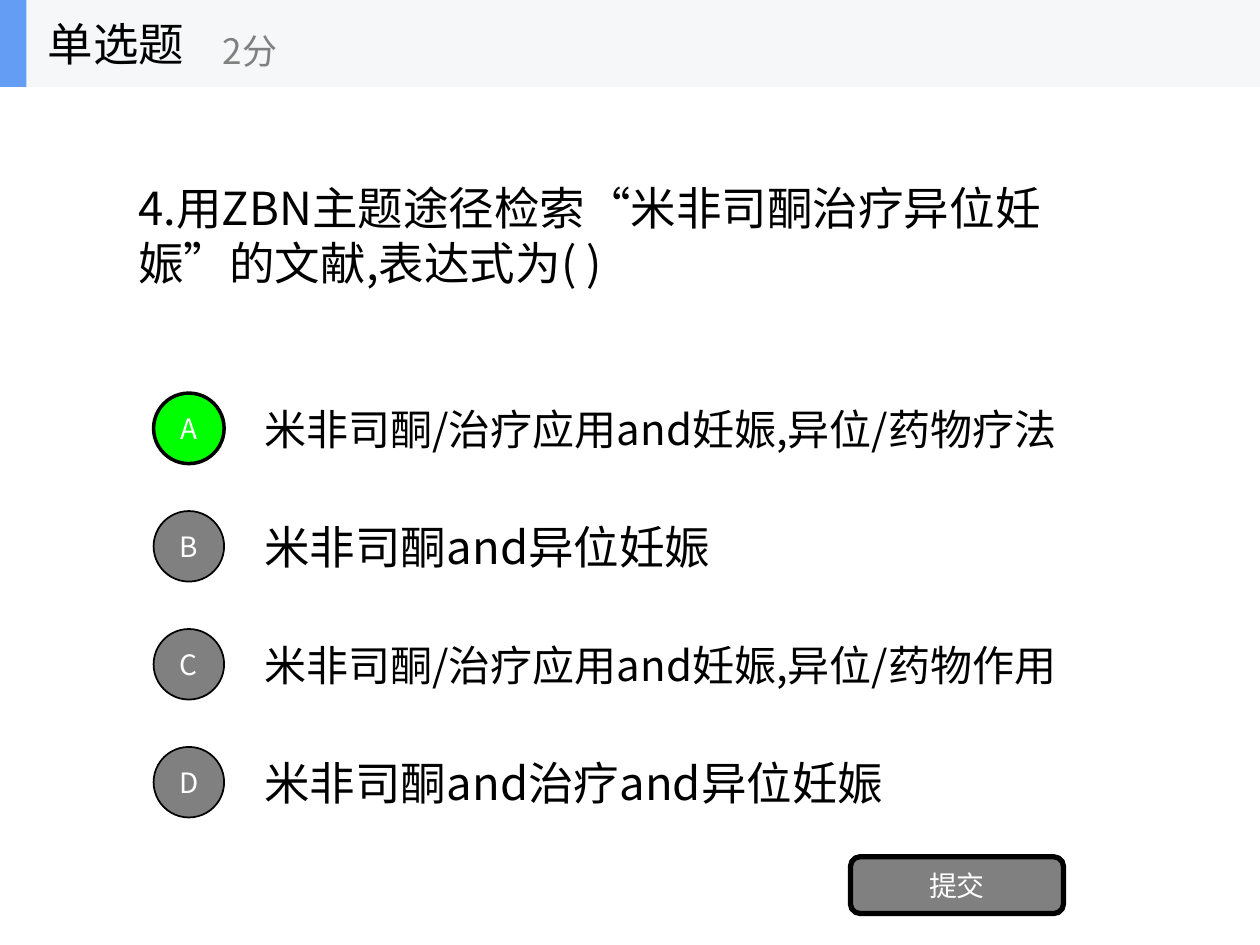
from lxml import etree
from pptx import Presentation
from pptx.dml.color import RGBColor
from pptx.enum.shapes import MSO_SHAPE
from pptx.enum.text import MSO_ANCHOR, MSO_AUTO_SIZE, PP_ALIGN
from pptx.oxml.ns import qn
from pptx.util import Pt

RECT, OVAL, ROUNDED = MSO_SHAPE.RECTANGLE, MSO_SHAPE.OVAL, MSO_SHAPE.ROUNDED_RECTANGLE
MIDDLE, LEFT, CENTER = MSO_ANCHOR.MIDDLE, PP_ALIGN.LEFT, PP_ALIGN.CENTER
GROW, FIXED = MSO_AUTO_SIZE.SHAPE_TO_FIT_TEXT, MSO_AUTO_SIZE.NONE

# Content
FONT = "Noto Sans CJK SC"
BLACK, WHITE, GRAY, GREEN = "000000", "FFFFFF", "808080", "00FF00"
BAR, ACCENT = "F6F7F8", "639EF4"
TITLE, SCORE, SUBMIT = "单选题", "2分", "提交"
QUESTION = "4.用ZBN主题途径检索“米非司酮治疗异位妊娠”的文献,表达式为( )"
ANSWER = "A"
OPTIONS = [  # letter, text, text size, text box width, text box height
    ("A", "米非司酮/治疗应用and妊娠,异位/药物疗法", 24, 475.2, 36),
    ("B", "米非司酮and异位妊娠", 26, 277.2, 38.2),
    ("C", "米非司酮/治疗应用and妊娠,异位/药物作用", 24, 475.2, 36),
    ("D", "米非司酮and治疗and异位妊娠", 26, 375.8, 38.2),
]

# Layout, in points
HEADER_HEIGHT = 49.7
FIRST_CENTER, OPTION_PITCH = 244.8, 67.4
CIRCLE_LEFT, CIRCLE_SIZE, OPTION_LEFT = 87.8, 40.3, 144


def color(value):
    return RGBColor.from_string(value)


def write(shape, text, size, ink, align=LEFT, wrap=True, fit=FIXED):
    frame = shape.text_frame
    settings = {"word_wrap": wrap, "auto_size": fit, "vertical_anchor": MIDDLE}
    for name, value in settings.items():
        setattr(frame, name, value)
    para = frame.paragraphs[0]
    para.alignment = align
    span = para.add_run()
    span.text = text
    for name, value in {"size": Pt(size), "name": FONT}.items():
        setattr(span.font, name, value)
    span.font.color.rgb = color(ink)
    # East Asian typeface
    etree.SubElement(span.font._element, qn("a:ea"), typeface=FONT)


def add_text(shapes, place, text, size, ink=BLACK, **options):
    box = shapes.add_textbox(*map(Pt, place))
    write(box, text, size, ink, **options)


def add_block(shapes, kind, place, fill, line_width=0):
    block = shapes.add_shape(kind, *map(Pt, place))
    block.shadow.inherit = False
    block.fill.solid()
    block.fill.fore_color.rgb = color(fill)
    if line_width:
        block.line.color.rgb = color(BLACK)
        block.line.width = Pt(line_width)
    else:
        block.line.fill.background()
    return block


deck = Presentation()
deck.slide_width, deck.slide_height = Pt(720), Pt(540)
page = deck.slides.add_slide(deck.slide_layouts[6])

# Question
add_text(page.shapes, (72, 99.4, 576, 69.8), QUESTION, 26, fit=GROW)

# Options: text and lettered circle share a centre line
for row, (letter, text, size, width, height) in enumerate(OPTIONS):
    middle = FIRST_CENTER + row * OPTION_PITCH
    add_text(page.shapes, (OPTION_LEFT, middle - height / 2, width, height),
             text, size, fit=GROW)
    fill, line_width = (GREEN, 2) if letter == ANSWER else (GRAY, 1)
    place = (CIRCLE_LEFT, middle - CIRCLE_SIZE / 2, CIRCLE_SIZE, CIRCLE_SIZE)
    circle = add_block(page.shapes, OVAL, place, fill, line_width)
    write(circle, letter, 16, WHITE, CENTER)

# Submit button
button = add_block(page.shapes, ROUNDED, (486, 489.6, 121.7, 32.4), GRAY, 3)
write(button, SUBMIT, 16, WHITE, CENTER)

# Header
header = page.shapes.add_group_shape().shapes
add_block(header, RECT, (0, 0, 720, HEADER_HEIGHT), BAR)
add_block(header, RECT, (0, 0, 15.1, HEADER_HEIGHT), ACCENT)
add_text(header, (20.2, 0, 149.8, HEADER_HEIGHT), TITLE, 26, wrap=False)
add_text(header, (120.2, 8.6, 180, 40.3), SCORE, 20, GRAY, wrap=False)

deck.save("out.pptx")
